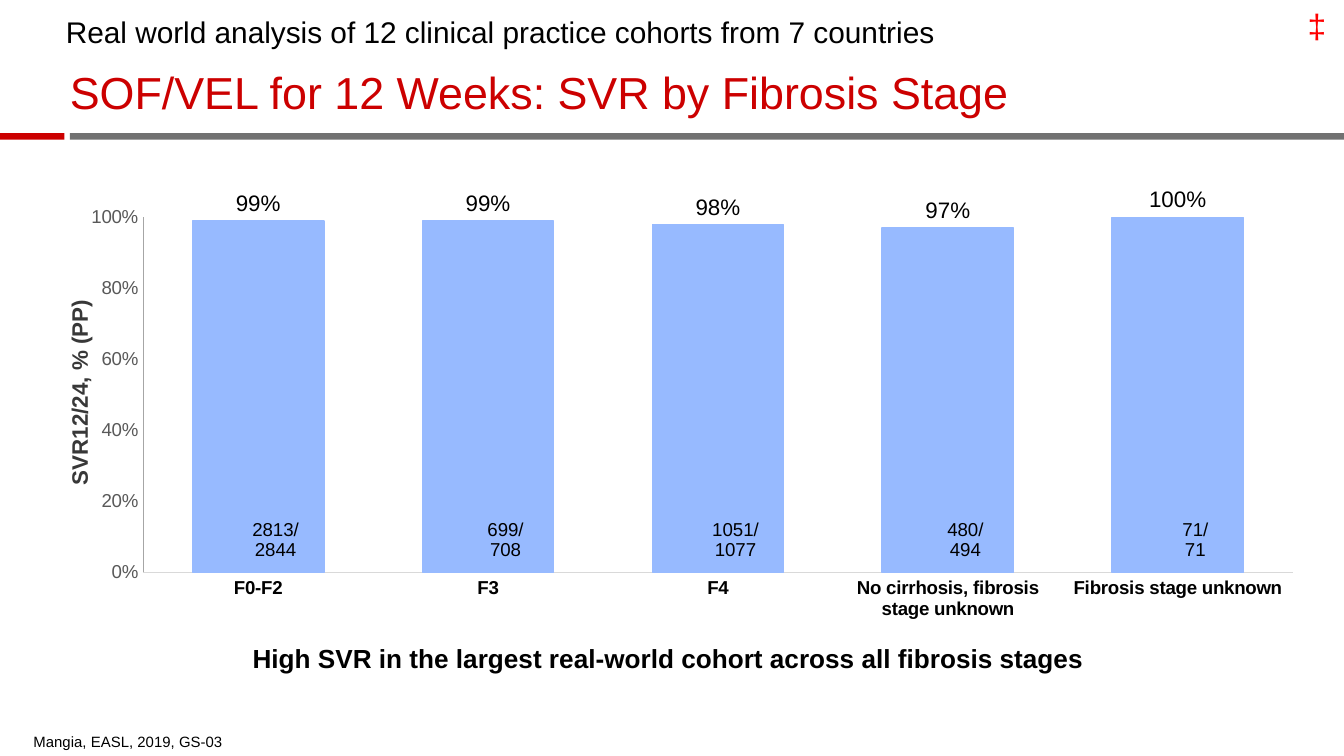
from lxml import etree
from pptx import Presentation
from pptx.chart.data import CategoryChartData
from pptx.dml.color import RGBColor
from pptx.enum.chart import XL_CHART_TYPE as CT, XL_LABEL_POSITION as LP, XL_TICK_MARK as TM
from pptx.enum.shapes import MSO_SHAPE
from pptx.enum.text import MSO_ANCHOR as ANCHOR, MSO_AUTO_SIZE as FIT, PP_ALIGN as ALIGN
from pptx.oxml.ns import qn
from pptx.util import Inches, Pt

FONT = "Arial"
RED, GREY, BLUE, BLACK = "CC0000", "717171", "97BAFF", "000000"
STAGES = [  # category, SVR rate, responders, patients
    ("F0-F2", 0.99, 2813, 2844),
    ("F3", 0.99, 699, 708),
    ("F4", 0.98, 1051, 1077),
    ("No cirrhosis, fibrosis stage unknown", 0.97, 480, 494),
    ("Fibrosis stage unknown", 1, 71, 71),
]
PLOT = {"x": 0.042, "y": 0.16, "w": 0.936, "h": 0.718}  # shares of the chart box


def rgb(color):
    return RGBColor.from_string(color)


def style(font, size, color=BLACK, bold=False):
    values = {"name": FONT, "size": Pt(size), "bold": bold}
    for name, value in values.items():
        setattr(font, name, value)
    font.color.rgb = rgb(color)


def place(s, box):
    for name, value in zip(("left", "top", "width", "height"), box):
        setattr(s, name, Inches(value))


def write(s, lines, size, color=BLACK, bold=False, align=ALIGN.LEFT,
          anchor=ANCHOR.TOP, spacing=None, margins=(0, 0), wrap=True):
    """Fill a text shape; margins are (horizontal, vertical) in inches."""
    tf = s.text_frame
    mx, my = (Inches(m) for m in margins)
    frame = {"auto_size": FIT.NONE, "word_wrap": wrap, "vertical_anchor": anchor,
             "margin_left": mx, "margin_right": mx, "margin_top": my, "margin_bottom": my}
    for name, value in frame.items():
        setattr(tf, name, value)
    for i, line in enumerate(lines):
        p = tf.add_paragraph() if i else tf.paragraphs[0]
        p.alignment, p.line_spacing, p.space_before = align, spacing, Pt(0)
        r = p.add_run()
        r.text = line
        style(r.font, size, color, bold)


def add_text(slide, box, lines, size, **options):
    s = slide.shapes.add_textbox(*(Inches(v) for v in box))
    write(s, lines, size, **options)
    return s


def add_bar(slide, box, color):
    s = slide.shapes.add_shape(MSO_SHAPE.RECTANGLE, *(Inches(v) for v in box))
    s.shadow.inherit = False
    s.fill.solid()
    s.fill.fore_color.rgb = rgb(color)
    s.line.fill.background()


def add_header(slide, box):
    x, y, w, h = box
    add_bar(slide, (x, y + h - 0.05, 0.48, 0.05), RED)
    add_bar(slide, (x + 0.52, y + h - 0.05, w - 0.52, 0.05), GREY)

    title, body = slide.placeholders
    place(title, (x + 0.52, y + 0.34, 9.64, 0.55))
    write(title, ["SOF/VEL for 12 Weeks: SVR by Fibrosis Stage"], 24, RED,
          anchor=ANCHOR.BOTTOM, spacing=0.9)

    place(body, (x + 0.49, y + 0.13, 9.01, 0.25))
    pPr = body.text_frame.paragraphs[0]._p.get_or_add_pPr()
    pPr.set("marL", "0")
    pPr.set("indent", "0")
    etree.SubElement(pPr, qn("a:buNone"))
    write(body, ["Real world analysis of 12 clinical practice cohorts from 7 countries"],
          16, spacing=0.9)

    add_text(slide, (x + w - 0.34, y, 0.29, 0.38), ["‡"], 18, color="FF0000",
             margins=(0.07, 0.04), wrap=False)


def fix_plot_area(chart):
    plot_area = chart._chartSpace.chart.plotArea
    for old in plot_area.findall(qn("c:layout")):
        plot_area.remove(old)
    layout = etree.Element(qn("c:layout"))
    plot_area.insert(0, layout)
    manual = etree.SubElement(layout, qn("c:manualLayout"))
    settings = {"layoutTarget": "inner", "xMode": "edge", "yMode": "edge", **PLOT}
    for tag, value in settings.items():
        etree.SubElement(manual, qn(f"c:{tag}")).set("val", str(value))


def format_axis(axis, color, line, bold=False):
    axis.has_major_gridlines = False
    axis.major_tick_mark = axis.minor_tick_mark = TM.NONE
    style(axis.tick_labels.font, 10, color, bold)
    axis.format.line.color.rgb = rgb(line)
    axis.format.line.width = Pt(0.75)


def add_svr_chart(slide, box):
    x, y, w, h = box
    data = CategoryChartData(number_format="0%")
    data.categories = [stage[0] for stage in STAGES]
    data.add_series("Series 1", [stage[1] for stage in STAGES])
    chart = slide.shapes.add_chart(CT.COLUMN_CLUSTERED, *(Inches(v) for v in box), data).chart
    chart.has_legend = chart.has_title = False
    style(chart.font, 10)
    fix_plot_area(chart)

    format_axis(chart.category_axis, BLACK, "D9D9D9", bold=True)
    axis = chart.value_axis
    format_axis(axis, "595959", "A6A6A6")
    axis.minimum_scale, axis.maximum_scale, axis.major_unit = 0, 1, 0.2
    axis.tick_labels.number_format = "0%"
    axis.tick_labels.number_format_is_linked = False

    plot = chart.plots[0]
    plot.gap_width = 75
    plot.vary_by_categories = False
    series = plot.series[0]
    series.format.fill.solid()
    series.format.fill.fore_color.rgb = rgb(BLUE)
    series.format.line.color.rgb = rgb(BLUE)
    series.format.line.width = Pt(0.75)
    labels = series.data_labels
    labels.show_value = True
    labels.number_format = "0%"
    labels.number_format_is_linked = False
    labels.position = LP.OUTSIDE_END
    style(labels.font, 12)

    s = add_text(slide, (x - 0.9, y + 1.8, 1.64, 0.18), ["SVR12/24, % (PP)"], 12,
                 color="383838", bold=True, align=ALIGN.CENTER, spacing=0.9)
    s.rotation = 270

    step = w * PLOT["w"] / len(STAGES)
    for i, (_, _, responders, patients) in enumerate(STAGES):
        add_text(slide, (x + 0.91 + i * step, y + 2.84, 0.92, 0.3),
                 [f"{responders}/", f"{patients}"], 10, align=ALIGN.CENTER, spacing=0.9)


def add_conclusion(slide, box):
    add_text(slide, box, ["High SVR in the largest real-world cohort across all fibrosis stages "],
             14, bold=True, align=ALIGN.CENTER, anchor=ANCHOR.MIDDLE, margins=(0.1, 0.05))


def add_source(slide, box):
    add_text(slide, box, ["Mangia, EASL, 2019, GS-03"], 8, anchor=ANCHOR.BOTTOM,
             margins=(0.1, 0.05))


def main():
    prs = Presentation()
    prs.slide_width, prs.slide_height = Inches(10), Inches(10 * 9 / 16)
    slide = prs.slides.add_slide(prs.slide_layouts[1])
    add_header(slide, (0, 0, 10, 1.04))
    add_svr_chart(slide, (0.68, 1.03, 9.14, 3.68))
    add_conclusion(slide, (0.86, 4.62, 8.28, 0.56))
    add_source(slide, (0.15, 5.4, 4.59, 0.23))
    prs.save("out.pptx")


if __name__ == "__main__":
    main()
